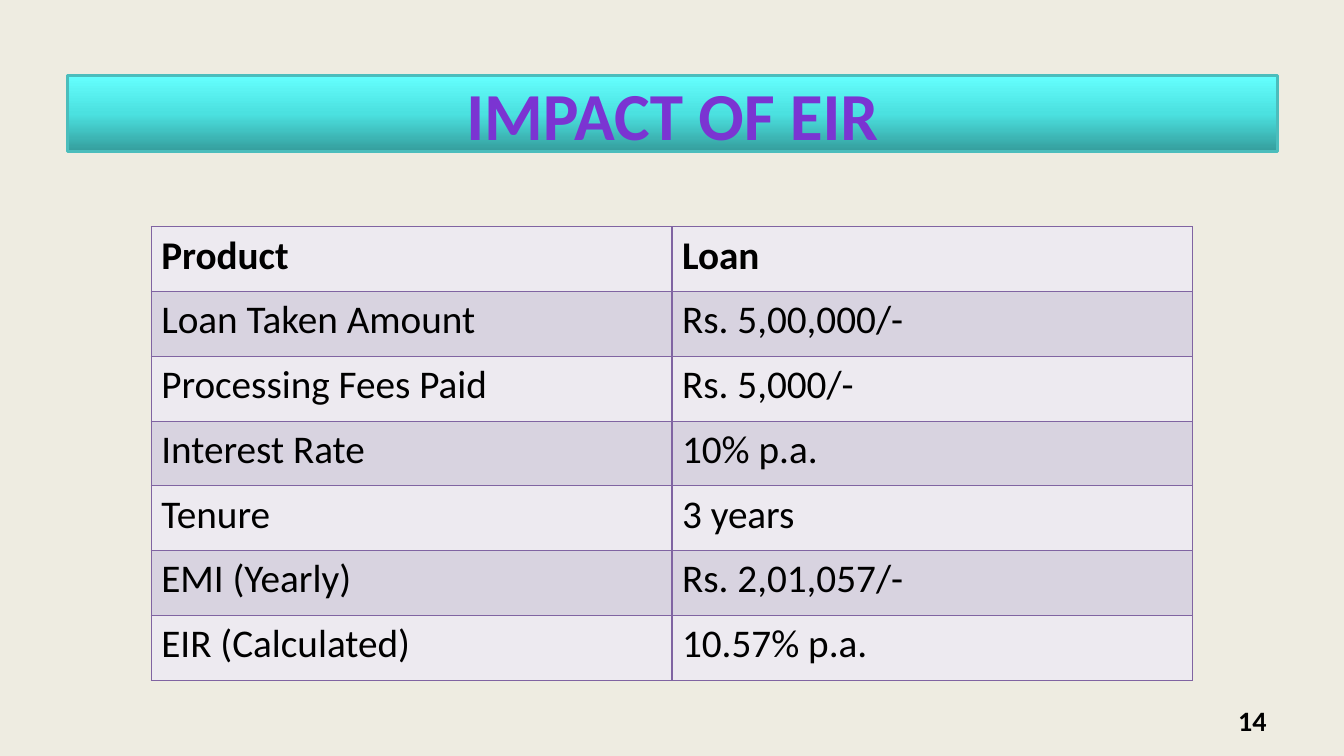
from copy import deepcopy

from lxml.etree import SubElement
from pptx import Presentation
from pptx.dml.color import RGBColor
from pptx.enum.shapes import MSO_SHAPE
from pptx.enum.text import MSO_ANCHOR, PP_ALIGN
from pptx.oxml.ns import qn
from pptx.util import Inches, Pt

LOAN_TERMS = [
    ("Product", "Loan"),
    ("Loan Taken Amount", "Rs. 5,00,000/-"),
    ("Processing Fees Paid", "Rs. 5,000/-"),
    ("Interest Rate", "10% p.a."),
    ("Tenure", "3 years"),
    ("EMI (Yearly)", "Rs. 2,01,057/-"),
    ("EIR (Calculated)", "10.57% p.a."),
]


def rgb(value):
    return RGBColor.from_string(value)


class LoanSlide:
    font = "Calibri"
    text_color = "000000"
    title_color = "7B34D2"
    banner_stops = [(0, "359E9D"), (0.5, "4BE1E0"), (1, "65FFFE")]
    banner_edge = "4BBDBC"
    border_color = "8064A2"
    bands = ("EDEAF0", "D8D3E0")

    def __init__(self, deck, background):
        self.slide = deck.slides.add_slide(deck.slide_layouts[6])
        fill = self.slide.background.fill
        fill.solid()
        fill.fore_color.rgb = rgb(background)

    def add_text(self, frame, text, size, color, bold=False, align=PP_ALIGN.LEFT):
        paragraph = frame.paragraphs[0]
        paragraph.alignment = align
        run = paragraph.add_run()
        run.text = text
        run.font.name = self.font
        run.font.size = Pt(size)
        run.font.bold = bold
        run.font.color.rgb = rgb(color)

    def banner(self, text, left, top, width, height):
        banner = self.slide.shapes.add_shape(
            MSO_SHAPE.RECTANGLE, Inches(left), Inches(top), Inches(width), Inches(height))
        banner.shadow.inherit = False
        banner.line.color.rgb = rgb(self.banner_edge)
        banner.line.width = Pt(2)

        # The default gradient has two stops; add the third
        banner.fill.gradient()
        banner.fill.gradient_angle = 90
        stop_list = next(banner._element.spPr.iter(qn("a:gsLst")))
        stop_list.append(deepcopy(stop_list[-1]))
        for stop, (position, color) in zip(banner.fill.gradient_stops, self.banner_stops):
            stop.position = position
            stop.color.rgb = rgb(color)

        banner.text_frame.vertical_anchor = MSO_ANCHOR.MIDDLE
        self.add_text(banner.text_frame, text, 48, self.title_color, True, PP_ALIGN.CENTER)

    def border(self, cell):
        properties = cell._tc.get_or_add_tcPr()
        for index, side in enumerate(("a:lnL", "a:lnR", "a:lnT", "a:lnB")):
            edge = SubElement(properties, qn(side), w=str(Pt(1)))
            solid = SubElement(edge, qn("a:solidFill"))
            SubElement(solid, qn("a:srgbClr"), val=self.border_color)
            properties.insert(index, edge)

    def table(self, rows, left, top, width, height):
        table = self.slide.shapes.add_table(
            len(rows), len(rows[0]), Inches(left), Inches(top),
            Inches(width), Inches(height)).table
        for row_index, row in enumerate(rows):
            for column_index, text in enumerate(row):
                cell = table.cell(row_index, column_index)
                cell.fill.solid()
                cell.fill.fore_color.rgb = rgb(self.bands[row_index % 2])
                self.border(cell)
                self.add_text(cell.text_frame, text, 28, self.text_color, row_index == 0)

    def page_number(self, number, left, top, width, height):
        frame = self.slide.shapes.add_textbox(
            Inches(left), Inches(top), Inches(width), Inches(height)).text_frame
        frame.word_wrap = True
        frame.vertical_anchor = MSO_ANCHOR.MIDDLE
        self.add_text(frame, number, 20, self.text_color, True, PP_ALIGN.RIGHT)


def main():
    deck = Presentation()
    deck.slide_width = Inches(13.33)
    deck.slide_height = Inches(7.5)

    impact = LoanSlide(deck, "EEECE1")
    impact.page_number("14", 9.55, 6.95, 3.11, 0.4)
    impact.banner("IMPACT OF EIR", 0.67, 0.75, 12, 0.75)
    impact.table(LOAN_TERMS, 1.5, 2.25, 10.33, 4.5)

    deck.save("out.pptx")


if __name__ == "__main__":
    main()
